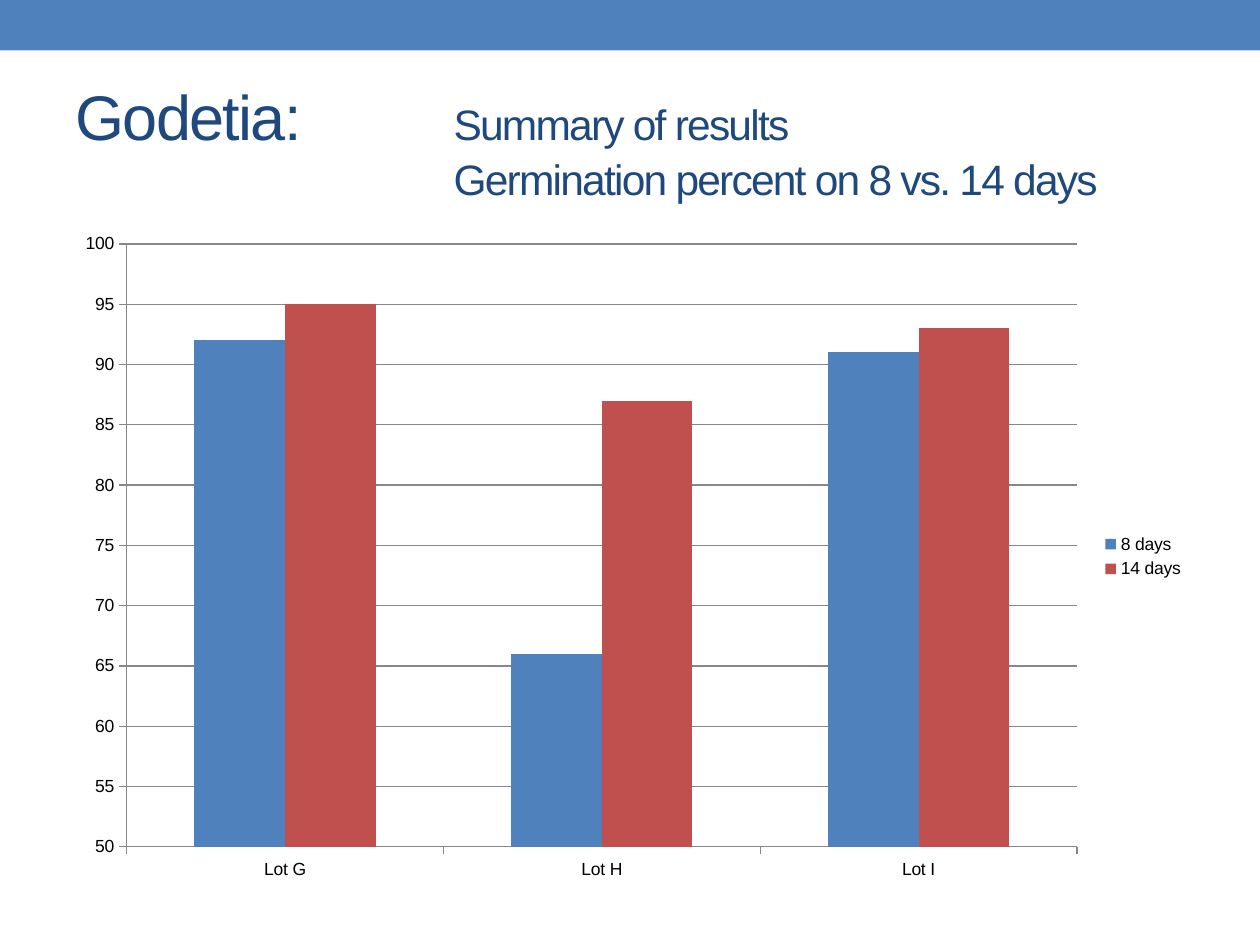
from dataclasses import dataclass

from lxml.etree import SubElement
from pptx import Presentation
from pptx.chart.axis import _BaseAxis
from pptx.chart.chart import Chart
from pptx.chart.data import CategoryChartData
from pptx.dml.color import RGBColor
from pptx.enum.chart import XL_CHART_TYPE, XL_LEGEND_POSITION, XL_TICK_MARK
from pptx.enum.shapes import MSO_SHAPE
from pptx.enum.text import MSO_ANCHOR, MSO_AUTO_SIZE, PP_ALIGN
from pptx.oxml.ns import qn
from pptx.slide import Slide
from pptx.util import Cm, Pt

BLUE = RGBColor(0x4F, 0x81, 0xBD)
RED = RGBColor(0xC0, 0x50, 0x4D)
NAVY = RGBColor(0x1F, 0x49, 0x7D)
GRAY = RGBColor(0x87, 0x87, 0x87)
BLACK = RGBColor(0, 0, 0)
FONT = "Arial"
LEFT = Cm(1.27)
CONTENT_WIDTH = Cm(22.86)
LOTS = ("Lot G", "Lot H", "Lot I")


@dataclass(frozen=True)
class TitlePart:
    text: str
    size: float
    breaks_before: bool = False


@dataclass(frozen=True)
class GerminationSeries:
    name: str
    percents: tuple[int, ...]
    color: RGBColor


TITLE_PARTS = (
    TitlePart("Godetia:", 36),
    TitlePart("\tSummary of results", 24.3),
    TitlePart("\tGermination percent on 8 vs. 14 days", 24.3, True),
)
GERMINATION = (
    GerminationSeries("8 days", (92, 66, 91), BLUE),
    GerminationSeries("14 days", (95, 87, 93), RED),
)


def add_band(page: Slide, width: int) -> None:
    band = page.shapes.add_shape(MSO_SHAPE.RECTANGLE, 0, 0, width, Cm(1.02))
    band.shadow.inherit = False
    band.fill.solid()
    band.fill.fore_color.rgb = BLUE
    band.line.fill.background()


def write_title(page: Slide) -> None:
    box = page.shapes.title
    box.left, box.top, box.width, box.height = LEFT, Cm(1.47), CONTENT_WIDTH, Cm(2.74)
    frame = box.text_frame
    frame.auto_size = MSO_AUTO_SIZE.NONE
    frame.vertical_anchor = MSO_ANCHOR.MIDDLE
    para = frame.paragraphs[0]
    para.alignment = PP_ALIGN.LEFT
    tab_list = SubElement(para._p.get_or_add_pPr(), qn("a:tabLst"))
    SubElement(tab_list, qn("a:tab"), pos=str(Cm(7.62)), algn="l")
    for part in TITLE_PARTS:
        if part.breaks_before:
            para.add_line_break()
        span = para.add_run()
        span.text = part.text
        span.font.name = FONT
        span.font.size = Pt(part.size)
        span.font.color.rgb = NAVY
        span._r.get_or_add_rPr().set("spc", "-100")


def style_axis(axis: _BaseAxis) -> None:
    axis.major_tick_mark = XL_TICK_MARK.OUTSIDE
    axis.minor_tick_mark = XL_TICK_MARK.NONE
    axis.format.line.color.rgb = GRAY
    axis.format.line.width = Pt(0.75)


def style_chart(chart: Chart) -> None:
    chart.has_title = False
    chart.font.name = FONT
    chart.font.size = Pt(10)
    chart.font.color.rgb = BLACK
    chart.has_legend = True
    chart.legend.position = XL_LEGEND_POSITION.RIGHT
    chart.legend.include_in_layout = False
    style_axis(chart.category_axis)
    value_axis = chart.value_axis
    style_axis(value_axis)
    value_axis.minimum_scale = 50
    value_axis.maximum_scale = 100
    value_axis.major_unit = 5
    value_axis.has_major_gridlines = True
    value_axis.major_gridlines.format.line.color.rgb = GRAY
    value_axis.major_gridlines.format.line.width = Pt(0.75)


def add_germination_chart(page: Slide) -> None:
    data = CategoryChartData()
    data.categories = LOTS
    for series in GERMINATION:
        data.add_series(series.name, series.percents)
    chart = page.shapes.add_chart(
        XL_CHART_TYPE.COLUMN_CLUSTERED, LEFT, Cm(4.45), CONTENT_WIDTH, Cm(13.54), data
    ).chart
    style_chart(chart)
    plot = chart.plots[0]
    plot.gap_width = 150
    plot.overlap = 0
    plot.vary_by_categories = False
    for columns, series in zip(plot.series, GERMINATION):
        columns.format.fill.solid()
        columns.format.fill.fore_color.rgb = series.color


def main() -> None:
    deck = Presentation()
    deck.slide_width, deck.slide_height = Cm(25.4), Cm(19.05)
    page = deck.slides.add_slide(deck.slide_layouts.get_by_name("Title Only"))
    add_band(page, deck.slide_width)
    write_title(page)
    add_germination_chart(page)
    deck.save("out.pptx")


if __name__ == "__main__":
    main()
